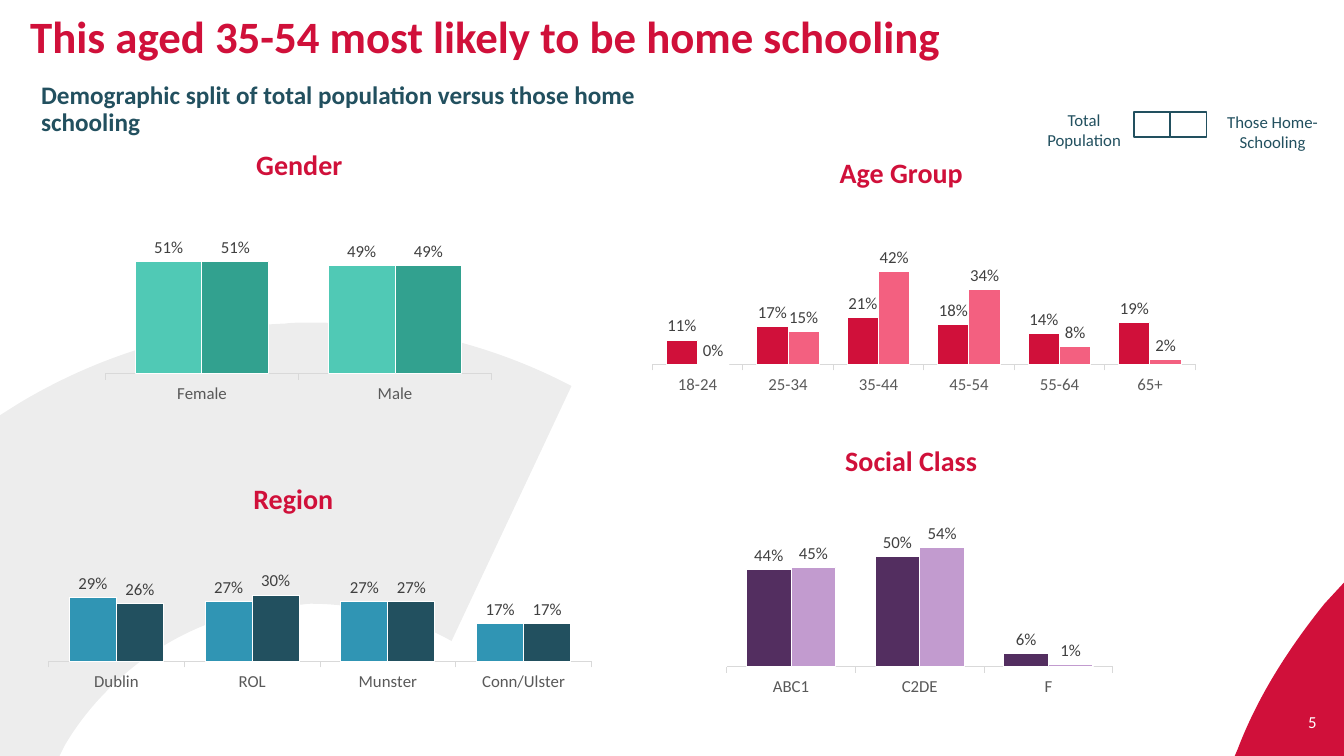
from lxml import etree
from pptx import Presentation, util as u
from pptx.chart.data import CategoryChartData
from pptx.dml.color import RGBColor
from pptx.enum import chart as charts, shapes, text
from pptx.oxml.ns import qn

# Square grid of 40 columns by 22.5 rows
COLUMNS, ROWS = 40, 22.5
CELL = u.Inches(1) / 3
FINE = 1000  # outline units in one cell

COLORS = {
    "red": "D0103A", "pink": "F36080", "navy": "22505F", "blue": "3095B4",
    "mint": "50C9B5", "green": "32A18F", "plum": "532E60", "lilac": "C29BCF",
    "black": "000000", "white": "FFFFFF", "axis": "D9D9D9",
    "axis_text": "595959", "label": "404040",
}

# Outlines: two numbers for a straight line, six for a curve
ARC = [
    (9.24, 9.6), (11.94, 9.6, 14.61, 10.23, 17.01, 11.49), (13.44, 19.08),
    (12.15, 18.36, 10.71, 17.97, 9.24, 17.97),
    (9.12, 17.97, 9, 18, 8.91, 18), (6.9, 18.09, 5.01, 18.87, 3.54, 20.22),
    (2.88, 20.82, 2.34, 21.48, 1.92, 22.2), (1.77, 22.5), (0, 22.5),
    (0, 12.36), (0.57, 12), (2.97, 10.56, 5.67, 9.75, 8.49, 9.63),
    (8.73, 9.6, 9, 9.6, 9.24, 9.6),
]
CORNER = [
    (40, 17.34), (40, 22.5), (36.75, 22.5), (36.84, 22.29),
    (37.41, 20.79, 38.31, 19.35, 39.42, 17.97),
]

# Heading, its place, chart place, categories, two colours, two sets of values
PANELS = [
    ("Age Group", (24.98, 4.62, 3.69, 1.02), (19.08, 4.12, 16.83, 7.77),
     ["18-24", "25-34", "35-44", "45-54", "55-64", "65+"], ("red", "pink"),
     [(0.11, 0.17, 0.21, 0.18, 0.14, 0.19), (0, 0.15, 0.42, 0.34, 0.08, 0.02)]),
    ("Region", (7.53, 14.31, 2.4, 1.02), (1.11, 12.96, 16.83, 7.77),
     ["Dublin", "ROL", "Munster", "Conn/Ulster"], ("blue", "navy"),
     [(0.29, 0.27, 0.27, 0.17), (0.26, 0.3, 0.27, 0.17)]),
    ("Gender", (7.62, 4.38, 2.58, 1.02), (2.9, 4.4, 11.97, 7.77),
     ["Female", "Male"], ("mint", "green"), [(0.51, 0.49), (0.51, 0.49)]),
    ("Social Class", (25.14, 13.18, 3.96, 1.02), (21.39, 13.12, 11.97, 7.77),
     ["ABC1", "C2DE", "F"], ("plum", "lilac"),
     [(0.44, 0.5, 0.06), (0.45, 0.54, 0.01)]),
]

TIGHT = dict.fromkeys(
    ("margin_left", "margin_top", "margin_right", "margin_bottom"), 0)
BOTTOM = {**TIGHT, "vertical_anchor": text.MSO_ANCHOR.BOTTOM}
CENTER = {"alignment": text.PP_ALIGN.CENTER}


def color(name):
    return RGBColor.from_string(COLORS[name])


def cells(*numbers):
    return [u.Emu(round(number * CELL)) for number in numbers]


def apply(target, formats):
    for name, value in formats.items():
        setattr(target, name, value)


def style_font(font, size, tint, bold=False):
    apply(font, {"name": "Calibri", "size": u.Pt(size), "bold": bold})
    font.color.rgb = color(tint)


def style_line(line, tint, width=0.75):
    line.color.rgb = color(tint)
    line.width = u.Pt(width)


def write(box, words, font, frame=None, para=None):
    apply(box.text_frame, {"word_wrap": True, **(frame or {})})
    paragraph = box.text_frame.paragraphs[0]
    apply(paragraph, para or {})
    span = paragraph.add_run()
    span.text = words
    style_font(span.font, *font)


def add_text(page, place, *content):
    write(page.shapes.add_textbox(*cells(*place)), *content)


def bend(segment, curve, left, top):
    """Turn a straight segment into a cubic curve."""
    segment.tag = qn("a:cubicBezTo")
    segment.clear()
    for x, y in zip(curve[::2], curve[1::2]):
        etree.SubElement(segment, qn("a:pt"), x=str(round((x - left) * FINE)),
                         y=str(round((y - top) * FINE)))


def add_outline(page, outline, tint, opacity=100):
    corners = [part[-2:] for part in outline]
    fine = [(round(x * FINE), round(y * FINE)) for x, y in corners]
    builder = page.shapes.build_freeform(*fine[0], scale=CELL / FINE)
    builder.add_line_segments(fine[1:], close=True)
    shape = builder.convert_to_shape()
    shape.shadow.inherit = False
    shape.fill.solid()
    shape.fill.fore_color.rgb = color(tint)
    shape.line.fill.background()

    # Curves
    left, top = (min(axis) for axis in zip(*corners))
    segments = list(shape.element.iter(qn("a:lnTo")))
    for segment, part in zip(segments, outline[1:]):
        if len(part) == 6:
            bend(segment, part, left, top)

    # Transparency
    if opacity < 100:
        solid = shape.element.spPr.find(qn("a:solidFill"))
        etree.SubElement(solid[0], qn("a:alpha"), val=str(opacity * 1000))


def add_swatch(page, place):
    swatch = page.shapes.add_shape(shapes.MSO_SHAPE.RECTANGLE, *cells(*place))
    swatch.shadow.inherit = False
    swatch.fill.background()
    style_line(swatch.line, "navy", 1)


def add_columns(page, place, categories, tints, values):
    data = CategoryChartData(number_format="0%")
    data.categories = categories
    for number, column in enumerate(values, 1):
        data.add_series(f"Series {number}", column)
    chart = page.shapes.add_chart(
        charts.XL_CHART_TYPE.COLUMN_CLUSTERED, *cells(*place), data).chart
    apply(chart, {"has_title": False, "has_legend": False})
    style_font(chart.font, 10, "black")

    # Axes
    apply(chart.value_axis, {"visible": False, "minimum_scale": 0,
                             "maximum_scale": 1, "has_major_gridlines": False})
    axis = chart.category_axis
    axis.major_tick_mark = charts.XL_TICK_MARK.OUTSIDE
    style_font(axis.tick_labels.font, 12, "axis_text")
    style_line(axis.format.line, "axis")

    # Columns and their labels
    plot = chart.plots[0]
    apply(plot, {"gap_width": 89, "overlap": 0, "vary_by_categories": False})
    for series, tint in zip(plot.series, tints):
        series.format.fill.solid()
        series.format.fill.fore_color.rgb = color(tint)
        style_line(series.format.line, "white")
        labels = series.data_labels
        apply(labels, {"show_value": True, "number_format": "0%",
                       "number_format_is_linked": False,
                       "position": charts.XL_LABEL_POSITION.OUTSIDE_END})
        style_font(labels.font, 12, "label")


def main():
    deck = Presentation()
    deck.slide_width, deck.slide_height = cells(COLUMNS, ROWS)
    page = deck.slides.add_slide(deck.slide_layouts[5])

    # Background
    add_outline(page, ARC, "black", 7)
    add_outline(page, CORNER, "red")

    # Title and subtitle
    title = page.shapes.title
    apply(title, dict(zip(("left", "top", "width", "height"),
                          cells(0.6, 0.42, 37.53, 3.36))))
    write(title, "This aged 35-54 most likely to be home schooling",
          (32, "red", True),
          {"vertical_anchor": text.MSO_ANCHOR.TOP,
           "auto_size": text.MSO_AUTO_SIZE.NONE},
          {"alignment": text.PP_ALIGN.LEFT, "line_spacing": 0.8,
           "space_after": u.Pt(6)})
    add_text(page, (0.93, 2.31, 21.21, 2.58),
             "Demographic split of total population versus those home schooling",
             (18, "navy", True), None,
             {"line_spacing": 0.9, "space_after": u.Pt(6)})

    # Charts with headings
    for heading, heading_place, *chart in PANELS:
        add_columns(page, *chart)
        add_text(page, heading_place, heading, (20, "red", True),
                 {**BOTTOM, "word_wrap": False}, CENTER)

    # Key
    for column in (33.75, 34.83):
        add_swatch(page, (column, 3.33, 1.08, 0.75))
    for place, words in (((31.14, 3.27, 2.25, 1.2), "Total Population"),
                         ((36.15, 3.33, 3.45, 1.2), "Those Home-Schooling")):
        add_text(page, place, words, (12, "navy"), BOTTOM, CENTER)

    # Page number
    add_text(page, (37.59, 20.91, 1.89, 1.2), "5", (12, "white"),
             {"vertical_anchor": text.MSO_ANCHOR.MIDDLE},
             {"alignment": text.PP_ALIGN.RIGHT, "line_spacing": 0.9})

    deck.save("out.pptx")


if __name__ == "__main__":
    main()
